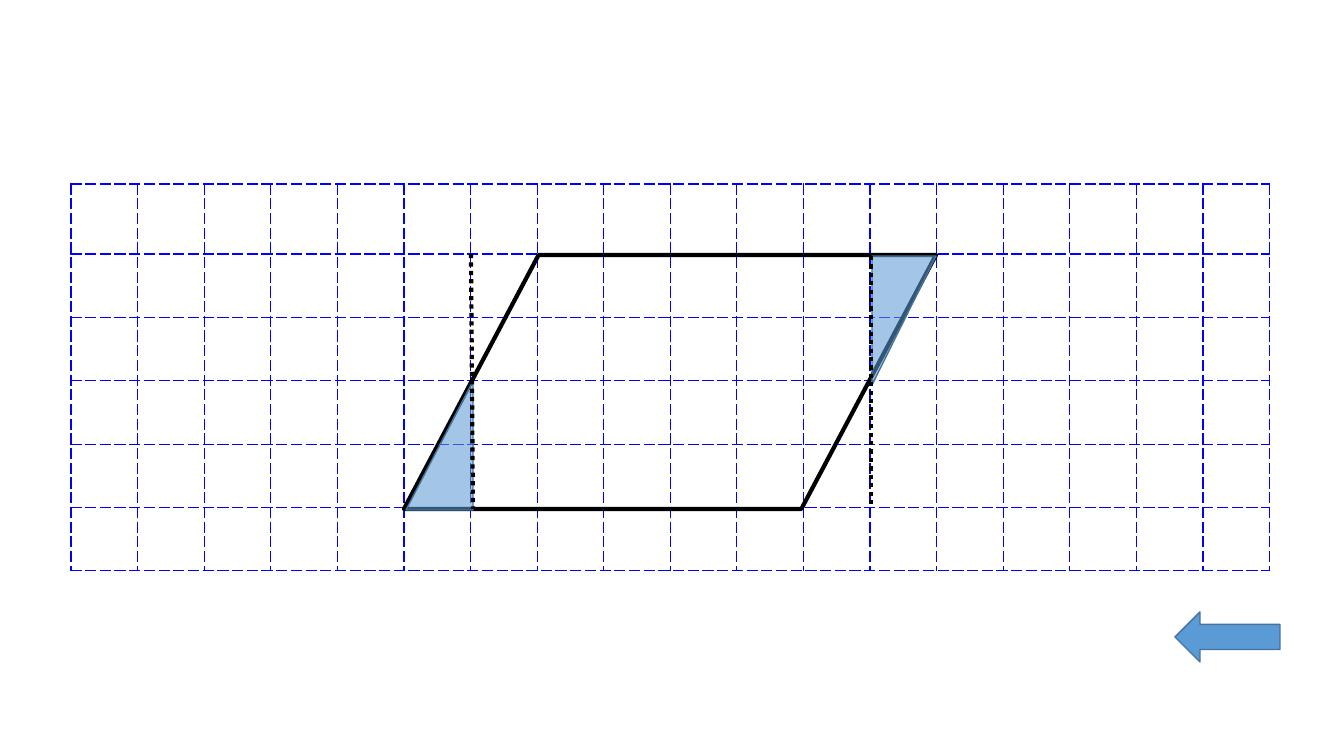
from lxml import etree
from pptx import Presentation
from pptx import util as u
from pptx.dml.color import RGBColor
from pptx.enum import dml, shapes
from pptx.oxml import parse_xml
from pptx.oxml.ns import nsdecls, qn

SLIDE_WIDTH, SLIDE_HEIGHT = 1344, 756
EMU_PER_PX = u.Inches(1) / 100.8
COLORS = {"grid": "0000FF", "outline": "000000", "fill": "5B9BD5", "edge": "43739E"}
COLUMNS, LOWER_ROWS, TOP_ROW_HEIGHT = 18, 5, 70


def px(length):
    return u.Emu(round(length * EMU_PER_PX))


def color(name):
    return RGBColor.from_string(COLORS[name])


def set_line(line, name, points):
    line.color.rgb = color(name)
    line.width = u.Pt(points)


def set_cell_borders(cell):
    properties = cell._tc.get_or_add_tcPr()
    for position, side in enumerate(("lnL", "lnR", "lnT", "lnB")):
        border = parse_xml(
            f'<a:{side} {nsdecls("a")} w="{u.Pt(1)}"><a:solidFill>'
            f'<a:srgbClr val="{COLORS["grid"]}"/></a:solidFill>'
            f'<a:prstDash val="lgDash"/></a:{side}>')
        properties.insert(position, border)


def add_grid(slide, left, top, width, height):
    frame = slide.shapes.add_table(
        LOWER_ROWS + 1, COLUMNS, px(left), px(top), px(width), px(height))
    table = frame.table
    table.first_row = False
    table.horz_banding = False
    for column in table.columns:
        column.width = px(width / COLUMNS)
    for index, row in enumerate(table.rows):
        lower_height = (height - TOP_ROW_HEIGHT) / LOWER_ROWS
        row.height = px(lower_height if index else TOP_ROW_HEIGHT)
        for cell in row.cells:
            cell.fill.background()
            set_cell_borders(cell)


def add_figure(slide, kind, left, top, width, height):
    shape = slide.shapes.add_shape(kind, px(left), px(top), px(width), px(height))
    shape.shadow.inherit = False
    return shape


def add_parallelogram(slide, left, top, width, height):
    shape = add_figure(
        slide, shapes.MSO_SHAPE.PARALLELOGRAM, left, top, width, height)
    shape.adjustments[0] = 0.53
    shape.fill.background()
    set_line(shape.line, "outline", 3)


def fill_blue(shape):
    shape.fill.solid()
    shape.fill.fore_color.rgb = color("fill")
    set_line(shape.line, "edge", 1)


def add_triangle(slide, left, top, width, height, rotation):
    offset = (height - width) / 2
    shape = add_figure(slide, shapes.MSO_SHAPE.RIGHT_TRIANGLE,
                       left - offset, top + offset, height, width)
    shape.rotation = rotation
    fill_blue(shape)
    fill_color = shape._element.spPr.find(qn("a:solidFill")).find(qn("a:srgbClr"))
    etree.SubElement(fill_color, qn("a:alpha")).set("val", "56000")


def add_dotted_line(slide, *ends):
    connector = slide.shapes.add_connector(
        shapes.MSO_CONNECTOR.STRAIGHT, *(px(end) for end in ends))
    set_line(connector.line, "outline", 3)
    connector.line.dash_style = dml.MSO_LINE.ROUND_DOT
    etree.SubElement(connector._element.spPr, qn("a:effectLst"))


def add_arrow(slide, left, top, width, height):
    fill_blue(add_figure(
        slide, shapes.MSO_SHAPE.LEFT_ARROW, left, top, width, height))


def main():
    presentation = Presentation()
    presentation.slide_width = px(SLIDE_WIDTH)
    presentation.slide_height = px(SLIDE_HEIGHT)
    slide = presentation.slides.add_slide(presentation.slide_layouts[6])
    add_grid(slide, 71, 184, 1199, 387)
    add_parallelogram(slide, 404, 255, 532, 254)
    add_triangle(slide, 406, 381, 67, 129, 270)
    add_dotted_line(slide, 471, 254, 473, 509)
    add_triangle(slide, 872, 256, 64, 129, 90)
    add_dotted_line(slide, 871, 256, 871, 504)
    add_arrow(slide, 1175, 612, 105, 50)
    presentation.save("out.pptx")


if __name__ == "__main__":
    main()
